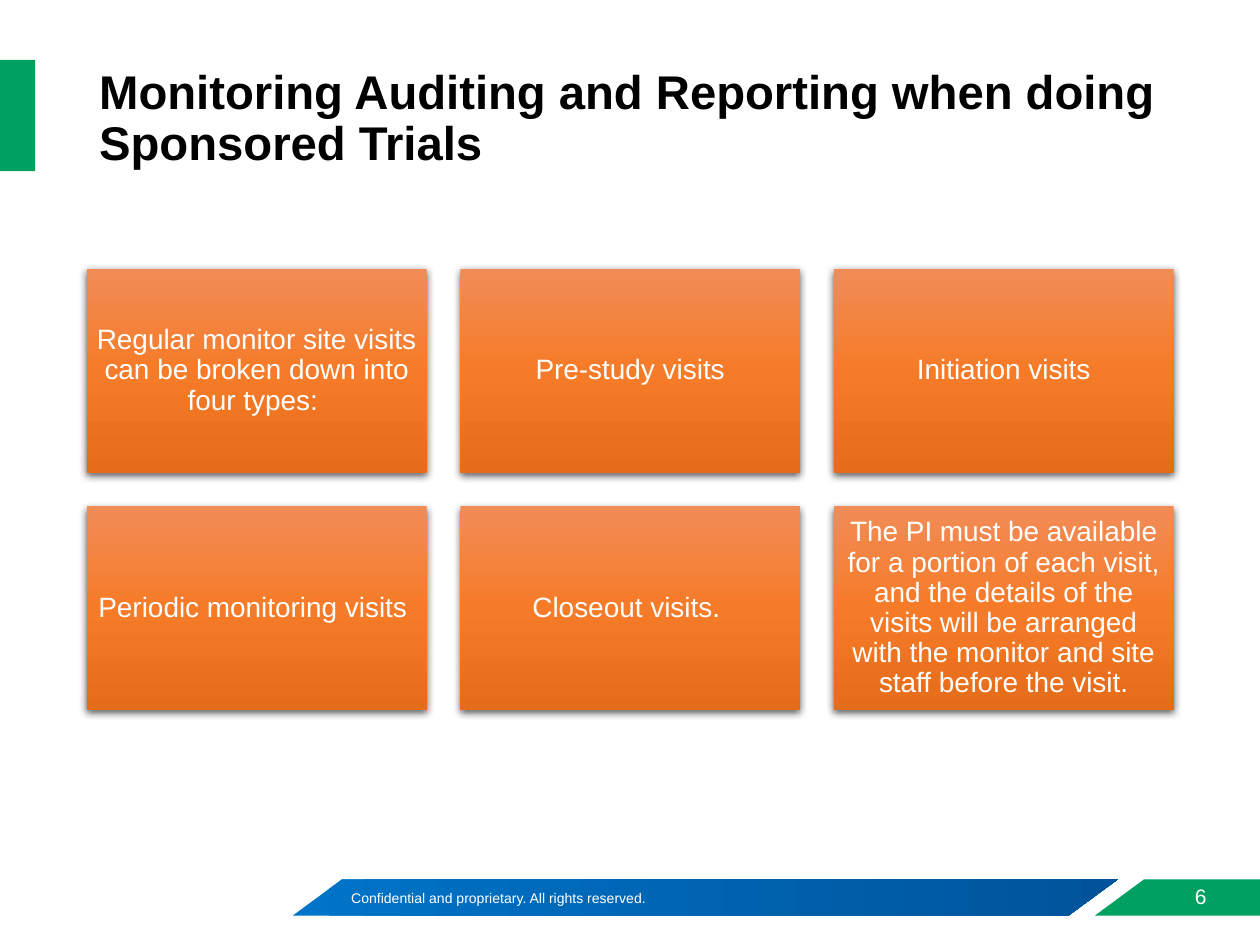
from lxml.etree import SubElement
from pptx import Presentation
from pptx.dml.color import RGBColor
from pptx.enum.shapes import MSO_SHAPE
from pptx.enum.text import MSO_ANCHOR, PP_ALIGN
from pptx.oxml.ns import qn
from pptx.util import Cm, Pt

RECTANGLE, PARALLELOGRAM = MSO_SHAPE.RECTANGLE, MSO_SHAPE.PARALLELOGRAM
TOP, MIDDLE = MSO_ANCHOR.TOP, MSO_ANCHOR.MIDDLE
LEFT, CENTER = PP_ALIGN.LEFT, PP_ALIGN.CENTER

WHITE = RGBColor(0xFF, 0xFF, 0xFF)
BLACK = RGBColor(0, 0, 0)
GREEN = RGBColor(0x00, 0xA1, 0x60)
BLUE_STOPS = [(0, RGBColor(0x00, 0x74, 0xC8)), (100, RGBColor(0x00, 0x53, 0x9B))]
ORANGE_STOPS = [
    (0, RGBColor(0xF1, 0x8C, 0x57)),
    (50, RGBColor(0xF6, 0x7B, 0x28)),
    (100, RGBColor(0xE5, 0x6C, 0x19)),
]

TITLE_FONT = {"name": "Arial", "size": Pt(27), "bold": True}
CARD_FONT = {"name": "Arial", "size": Pt(16)}
FOOTER_FONT = {"name": "Arial", "size": Pt(8)}
NUMBER_FONT = {"name": "Arial", "size": Pt(12)}

CARDS = [
    "Regular monitor site visits can be broken down into four types: ",
    "Pre-study visits",
    "Initiation visits",
    "Periodic monitoring visits ",
    "Closeout visits. ",
    "The PI must be available for a portion of each visit, and the details "
    "of the visits will be arranged with the monitor and site staff before "
    "the visit.",
]
COLUMNS = 3
CARD_LEFT, CARD_TOP = 1.75, 5.42
CARD_WIDTH, CARD_HEIGHT = 6.85, 4.11
CARD_GAP = 0.68


def write_text(shape, text, font, color, align=LEFT, anchor=MIDDLE, spacing=1.0):
    frame = shape.text_frame
    frame.word_wrap = True
    frame.vertical_anchor = anchor
    para = frame.paragraphs[0]
    para.alignment = align
    para.line_spacing = spacing
    span = para.add_run()
    span.text = text
    for key, value in font.items():
        setattr(span.font, key, value)
    span.font.color.rgb = color


def add_label(page, place, text, font, color, **layout):
    box = page.shapes.add_textbox(*map(Cm, place))
    write_text(box, text, font, color, **layout)


def add_plain_shape(page, kind, place):
    """Add a preset shape without outline or shadow."""
    shape = page.shapes.add_shape(kind, *map(Cm, place))
    shape.line.fill.background()
    shape.shadow.inherit = False
    return shape


def fill_solid(shape, color):
    shape.fill.solid()
    shape.fill.fore_color.rgb = color


def fill_gradient(shape, stops, angle):
    """Fill with (percent, colour) stops; the angle runs counter-clockwise."""
    shape.fill.gradient()
    shape.fill.gradient_angle = angle
    stop_list = shape.element.spPr.find(".//" + qn("a:gsLst"))
    stop_list.clear()
    for percent, color in stops:
        stop = SubElement(stop_list, qn("a:gs"), pos=str(percent * 1000))
        SubElement(stop, qn("a:srgbClr"), val=str(color))


def add_drop_shadow(shape):
    effects = shape.element.spPr.find(qn("a:effectLst"))
    shadow = SubElement(
        effects, qn("a:outerShdw"), blurRad=str(Pt(4.5)), dist=str(Pt(1.5)),
        dir="5400000", algn="ctr", rotWithShape="0",
    )
    color = SubElement(shadow, qn("a:srgbClr"), val=str(BLACK))
    SubElement(color, qn("a:alpha"), val="63000")


def add_card(page, index, text):
    row, column = divmod(index, COLUMNS)
    left = CARD_LEFT + column * (CARD_WIDTH + CARD_GAP)
    top = CARD_TOP + row * (CARD_HEIGHT + CARD_GAP)
    card = add_plain_shape(page, RECTANGLE, (left, top, CARD_WIDTH, CARD_HEIGHT))
    fill_gradient(card, ORANGE_STOPS, 270)
    add_drop_shadow(card)
    for side in ("left", "top", "right", "bottom"):
        setattr(card.text_frame, f"margin_{side}", Cm(0.17))
    write_text(card, text, CARD_FONT, WHITE, align=CENTER, spacing=0.9)


def add_footer(page):
    band = add_plain_shape(page, PARALLELOGRAM, (5.9, 17.73, 16.63, 0.73))
    band.adjustments[0] = 1.36
    fill_gradient(band, BLUE_STOPS, 0)
    add_label(page, (6.83, 17.81, 9.73, 0.6),
              "Confidential and proprietary. All rights reserved.",
              FOOTER_FONT, WHITE, anchor=TOP)

    corners = [(22.07, 18.46), (23.06, 17.73), (25.4, 17.73), (25.4, 18.46)]
    start, *others = [(Cm(x), Cm(y)) for x, y in corners]
    builder = page.shapes.build_freeform(*start)
    builder.add_line_segments(others, close=True)
    corner = builder.convert_to_shape()
    corner.line.fill.background()
    corner.shadow.inherit = False
    fill_solid(corner, GREEN)
    add_label(page, (23.62, 17.68, 1.17, 0.79), "6", NUMBER_FONT, WHITE, align=CENTER)


def main():
    deck = Presentation()
    deck.slide_width, deck.slide_height = Cm(25.4), Cm(19.05)
    page = deck.slides.add_slide(deck.slide_layouts[6])

    accent = add_plain_shape(page, RECTANGLE, (0, 1.21, 0.71, 2.24))
    fill_solid(accent, GREEN)
    add_label(page, (1.75, 1.3, 21.9, 2.24),
              "Monitoring Auditing and Reporting when doing Sponsored Trials",
              TITLE_FONT, BLACK, spacing=0.9)
    for index, text in enumerate(CARDS):
        add_card(page, index, text)
    add_footer(page)

    deck.save("out.pptx")


if __name__ == "__main__":
    main()
